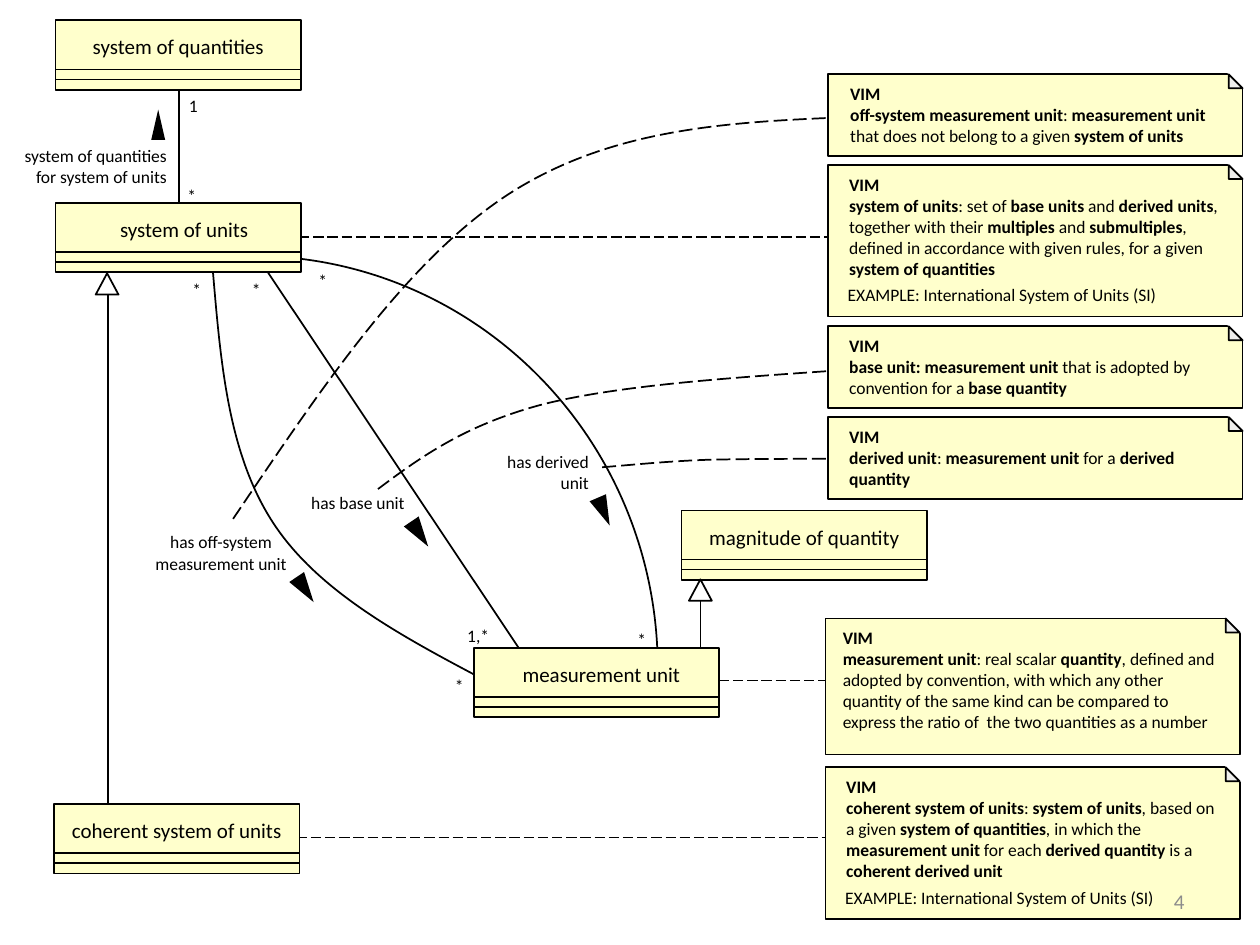
import pptx
import pptx.util
import pptx.dml.color
import pptx.enum.dml
import pptx.enum.shapes
import pptx.enum.text
from pptx.oxml.ns import qn
from lxml import etree

SHAPE = pptx.enum.shapes.MSO_SHAPE
ALIGN = pptx.enum.text.PP_ALIGN
LEFT, CENTER, RIGHT = ALIGN.LEFT, ALIGN.CENTER, ALIGN.RIGHT
BLACK = pptx.dml.color.RGBColor(0, 0, 0)
WHITE = pptx.dml.color.RGBColor(255, 255, 255)
CREAM = pptx.dml.color.RGBColor(0xFF, 0xFF, 0xCC)
FOLD_GRAY = pptx.dml.color.RGBColor(0xEF, 0xEF, 0xED)
NUMBER_GRAY = pptx.dml.color.RGBColor(0x8C, 0x8C, 0x8C)

# All positions below are in inches.
CLASS_W, CLASS_H = 1.95, 0.55
CLASSES = [  # name, left, top, shift of the name
    ("system of quantities", 0.44, 0.16, 0),
    ("system of units", 0.44, 1.61, 0.05),
    ("magnitude of quantity", 5.41, 4.05, 0),
    ("measurement unit", 3.76, 5.14, 0.04),
    ("coherent system of units", 0.43, 6.38, 0),
]

EXAMPLE = "EXAMPLE: International System of Units (SI)"
NOTE_W, FOLD, MASK = 3.29, 0.11, 0.2
NOTES = [  # left, top, height, text inset, example, definition (bold and plain by turns)
    (6.57, 0.59, 0.65, 0.08, None,
     "off-system measurement unit|: |measurement unit |that does not belong to a given |system of units"),
    (6.57, 1.31, 1.2, 0.07, EXAMPLE,
     "system of units|: set of |base units |and |derived units|, together with their |multiples| and "
     "|submultiples|, defined in accordance with given rules, for a given |system of quantities"),
    (6.57, 2.59, 0.65, 0.07, None,
     "base unit: measurement unit| that is adopted by convention for a |base quantity"),
    (6.57, 3.31, 0.65, 0.07, None,
     "derived unit|: |measurement unit| for a |derived quantity"),
    (6.55, 4.91, 1.08, 0.04, None,
     "measurement unit|: real scalar |quantity|, defined and adopted by convention, with which any other "
     "quantity of the same kind can be compared to express the ratio of  the two quantities as a number"),
    (6.55, 6.09, 1.2, 0.07, EXAMPLE,
     "coherent system of units|: |system of units|, based on a given |system of quantities|, in which the "
     "|measurement unit| for each |derived quantity |is a |coherent derived unit"),
]

CURVES = [  # dashed, start followed by the Bezier points
    (True, [(1.85, 4.12), (2.54, 3.1), (3.22, 2.07), (4.04, 1.54), (4.86, 1.01), (5.8, 0.97), (6.75, 0.93)]),
    (False, [(1.69, 2.14), (1.75, 2.88), (1.81, 3.62), (2.18, 4.17), (2.55, 4.72), (3.24, 5.08), (3.93, 5.44)]),
    (True, [(4.78, 3.71), (5.03, 3.69), (5.29, 3.66), (5.61, 3.65), (5.93, 3.64), (6.32, 3.64), (6.71, 3.64)]),
    (True, [(3, 3.88), (3.35, 3.62), (3.7, 3.37), (4.31, 3.21), (4.91, 3.06), (5.78, 3), (6.64, 2.94)]),
]
NOTE_LINKS = [(1.79, 6.65, 6.88, 6.65), (1.81, 1.88, 6.89, 1.88), (3.79, 5.4, 8.38, 5.4)]
ASSOCIATIONS = [(1.42, 0.38, 1.42, 2.03), (4.21, 5.28, 2.07, 2.08)]
GENERALIZATIONS = [(5.56, 5.34, 5.56, 4.68), (0.86, 6.67, 0.86, 2.31)]
HOLLOW_HEADS = [(5.47, 4.6), (0.76, 2.17)]
DERIVED_UNIT_ARC = (-1.21, 2.03, 6.43, 6.54)
READING_MARKS = [  # left, top, width, rotation
    (1.2, 0.87, 0.11, 0), (3.26, 4.12, 0.14, 146),
    (4.72, 3.94, 0.14, 156.8), (2.35, 4.56, 0.14, 146),
]
LABELS = [  # text, left, top, width, height, alignment
    ("has base unit ", 2.35, 3.86, 1.01, 0.27, CENTER),
    ("has derived unit", 3.76, 3.53, 1.01, 0.44, RIGHT),
    ("system of quantities for system of units", 0, 1.1, 1.42, 0.44, RIGHT),
    ("has off-system\nmeasurement unit", 1.08, 4.17, 1.35, 0.44, CENTER),
    ("1", 1.4, 0.71, 0.26, 0.27, LEFT),
    ("1,*", 3.61, 4.91, 0.67, 0.27, LEFT),
]
STARS = [(1.39, 1.42), (2.43, 2.09), (1.9, 2.17), (1.43, 2.17), (4.96, 4.94), (3.51, 5.31)]

deck = pptx.Presentation()


def cm(inches):
    return pptx.util.Cm(round(inches * 2.54, 2))


deck.slide_width, deck.slide_height = cm(10), cm(7.5)
shapes = deck.slides.add_slide(deck.slide_layouts[6]).shapes


def style_line(line, width=1, dashed=False):
    line.color.rgb = BLACK
    line.width = pptx.util.Pt(width)
    if dashed:
        line.dash_style = pptx.enum.dml.MSO_LINE.LONG_DASH


def add_line(ends, width=1, dashed=False):
    connector = shapes.add_connector(pptx.enum.shapes.MSO_CONNECTOR.STRAIGHT, *map(cm, ends))
    style_line(connector.line, width, dashed)
    etree.SubElement(connector._element.spPr, qn("a:effectLst"))


def add_figure(kind, box, fill, outlined=True, rotation=0):
    figure = shapes.add_shape(kind, *map(cm, box))
    figure.shadow.inherit = False
    figure.rotation = rotation
    if fill is None:
        figure.fill.background()
    else:
        figure.fill.solid()
        figure.fill.fore_color.rgb = fill
    if outlined:
        style_line(figure.line)
    else:
        figure.line.fill.background()
    return figure


def add_curve(points, dashed):
    """Draw straight segments, then turn each three of them into one cubic Bezier."""
    start, *rest = [(cm(x), cm(y)) for x, y in points]
    builder = shapes.build_freeform(*start, scale=1.0)
    builder.add_line_segments(rest, close=False)
    curve = builder.convert_to_shape()
    curve.shadow.inherit = False
    curve.fill.background()
    style_line(curve.line, dashed=dashed)
    segments = list(curve._element.iter(qn("a:lnTo")))
    for i in range(0, len(segments), 3):
        bezier = etree.Element(qn("a:cubicBezTo"))
        segments[i].addprevious(bezier)
        for segment in segments[i:i + 3]:
            bezier.append(segment[0])
            segment.getparent().remove(segment)


def format_text(frame, size, color, align):
    for paragraph in frame.paragraphs:
        paragraph.alignment = align
        for run in paragraph.runs:
            run.font.name = "Calibri"
            run.font.size = pptx.util.Pt(size)
            run.font.color.rgb = color


def add_text(text, box, size=10, align=LEFT, color=BLACK):
    frame = shapes.add_textbox(*map(cm, box)).text_frame
    frame.word_wrap = True
    frame.text = text
    format_text(frame, size, color, align)
    return frame


def add_class(name, left, top, shift):
    add_figure(SHAPE.RECTANGLE, (left, top, CLASS_W, CLASS_H), CREAM)
    for drop in (0.39, 0.47):
        add_line((left, top + drop, left + CLASS_W, top + drop))
    add_text(name, (left + shift, top + 0.06, CLASS_W, 0.3), 12, CENTER)


def add_note(left, top, height, inset, example, definition):
    right = left + NOTE_W
    add_figure(SHAPE.SNIP_1_RECTANGLE, (left, top, NOTE_W, height), CREAM).adjustments[0] = 0
    add_figure(SHAPE.RIGHT_TRIANGLE, (right - 0.16, top - 0.05, MASK, MASK), WHITE, False, 180)
    add_figure(SHAPE.RIGHT_TRIANGLE, (right - FOLD, top, FOLD, FOLD), FOLD_GRAY)
    frame = add_text("VIM", (left + inset, top + 0.02, 3.2 - inset, height - 0.04))
    frame.paragraphs[0].runs[0].font.bold = True
    paragraph = frame.add_paragraph()
    for i, part in enumerate(definition.split("|")):
        run = paragraph.add_run()
        run.text = part
        run.font.bold = i % 2 == 0
    format_text(frame, 10, BLACK, LEFT)
    if example:
        add_text(example, (left + 0.06, top + 0.9, 3.32, 0.27))


for dashed, points in CURVES:
    add_curve(points, dashed)
for ends in NOTE_LINKS:
    add_line(ends, 0.75, True)
for ends in ASSOCIATIONS:
    add_line(ends)
arc = add_figure(SHAPE.ARC, DERIVED_UNIT_ARC, None)
arc.adjustments[0], arc.adjustments[1] = 162.1, 0
for ends in GENERALIZATIONS:
    add_line(ends)
for class_box in CLASSES:
    add_class(*class_box)
for left, top in HOLLOW_HEADS:
    add_figure(SHAPE.ISOSCELES_TRIANGLE, (left, top, 0.18, 0.17), WHITE)
for note in NOTES:
    add_note(*note)
for left, top, width, rotation in READING_MARKS:
    add_figure(SHAPE.ISOSCELES_TRIANGLE, (left, top, width, 0.24), BLACK, False, rotation)
for text, *box, align in LABELS:
    add_text(text, box, align=align)
for left, top in STARS:
    add_text("*", (left, top, 0.3, 0.27))
page_number = add_text("4", (7.17, 6.95, 2.33, 0.4), 12, RIGHT, NUMBER_GRAY)
page_number.vertical_anchor = pptx.enum.text.MSO_ANCHOR.MIDDLE

deck.save("out.pptx")
